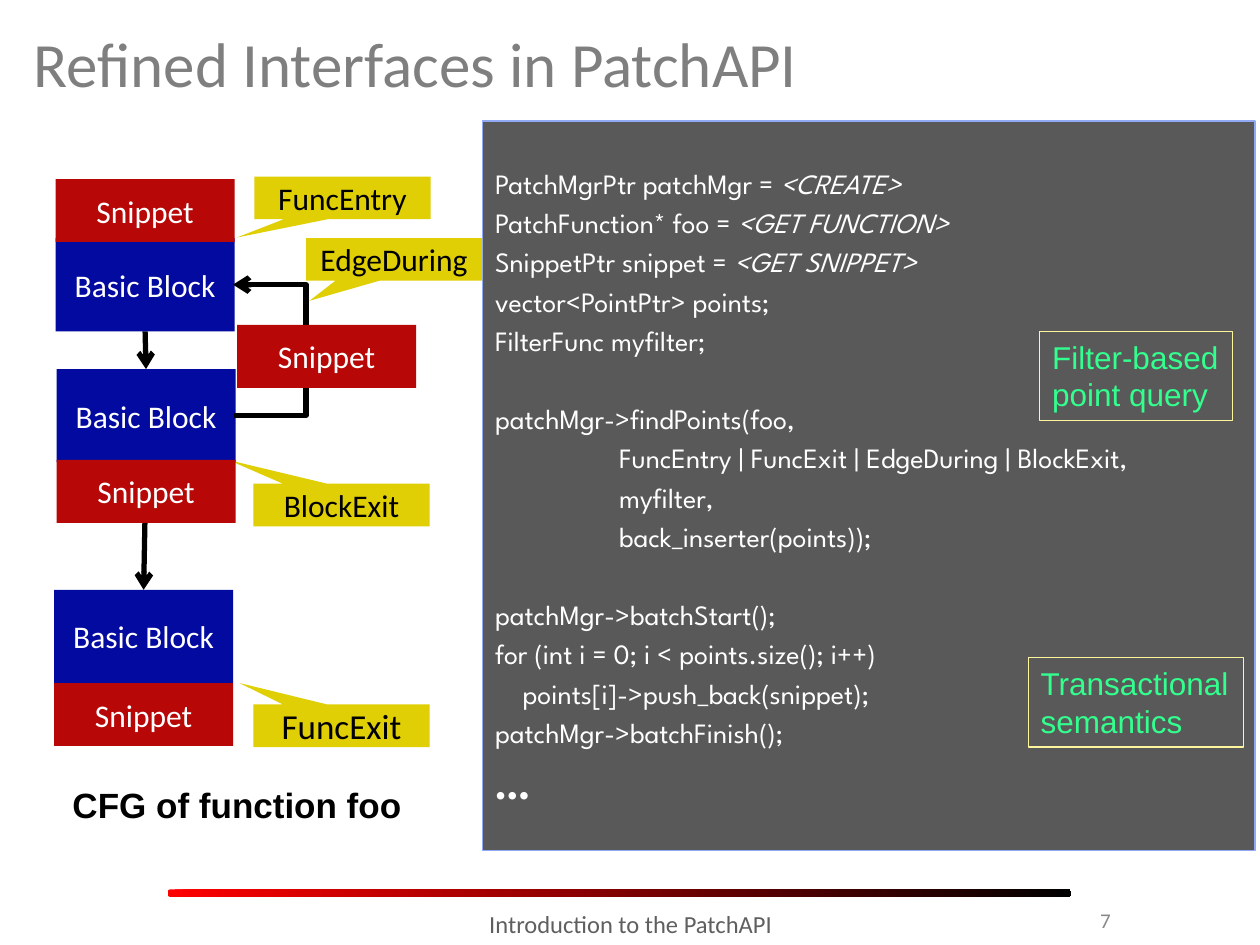
from lxml import etree
from pptx import Presentation
from pptx import util as u
from pptx.dml.color import RGBColor
from pptx.enum import shapes, text
from pptx.oxml import ns

Cm, Pt = u.Cm, u.Pt
COLORS = {
    "title": "7F7F7F", "number": "898989", "footer": "5F5F5F",
    "block": "030A9F", "snippet": "B70707", "callout": "DFCF04",
    "panel": "595959", "panel_line": "92AAF6",
    "note": "33FF8F", "note_line": "FDF69C",
    "red": "FF0000", "black": "000000", "white": "FFFFFF",
}
CODE = [
    "PatchMgrPtr patchMgr = <CREATE>",
    "PatchFunction* foo = <GET FUNCTION>",
    "SnippetPtr snippet = <GET SNIPPET>",
    "vector<PointPtr> points;",
    "FilterFunc myfilter;",
    "patchMgr->findPoints(foo,",
    "                  FuncEntry | FuncExit | EdgeDuring | BlockExit,",
    "                  myfilter,",
    "                  back_inserter(points));",
    "patchMgr->batchStart();",
    "for (int i = 0; i < points.size(); i++)",
    "    points[i]->push_back(snippet);",
    "patchMgr->batchFinish();",
    "…",
]
SECTION_STARTS = (5, 9)
BLOCK_SIZE = (3.61, 1.88)
SNIPPET_SIZE = (3.61, 1.27)
CALLOUT_SIZE = (3.55, 0.86)


def color(name):
    return RGBColor.from_string(COLORS[name])


def style(para, size, ink, font="Calibri", bold=False, align=text.PP_ALIGN.LEFT):
    para.alignment = align
    para.font.name = font
    para.font.size = Pt(size)
    para.font.bold = bold
    para.font.color.rgb = color(ink)


def write(shape, lines, *args, anchor=text.MSO_ANCHOR.MIDDLE, wrap=True, **kwargs):
    frame = shape.text_frame
    frame.word_wrap = wrap
    frame.vertical_anchor = anchor
    frame.text = lines
    for para in frame.paragraphs:
        style(para, *args, **kwargs)


def add_text(page, place, lines, *args, **kwargs):
    box = page.shapes.add_textbox(*map(Cm, place))
    write(box, lines, *args, **kwargs)
    return box


def add_box(page, place, fill, kind=shapes.MSO_SHAPE.RECTANGLE):
    box = page.shapes.add_shape(kind, *map(Cm, place))
    box.shadow.inherit = False
    box.fill.solid()
    box.fill.fore_color.rgb = color(fill)
    box.line.fill.background()
    return box


def add_node(page, left, top, label, fill, size):
    box = add_box(page, (left, top, *size), fill)
    write(box, label, 18, "white", align=text.PP_ALIGN.CENTER)
    return box


def add_callout(page, left, top, label, tip, size=18):
    box = add_box(page, (left, top, *CALLOUT_SIZE), "callout",
                  shapes.MSO_SHAPE.RECTANGULAR_CALLOUT)
    box.adjustments[0], box.adjustments[1] = tip
    write(box, label, size, "black", align=text.PP_ALIGN.CENTER)


def add_arrow(page, kind, ends):
    arrow = page.shapes.add_connector(kind, *map(Cm, ends))
    arrow.line.color.rgb = color("black")
    arrow.line.width = Pt(3)
    etree.SubElement(arrow.line._get_or_add_ln(), ns.qn("a:tailEnd"), type="arrow")
    etree.SubElement(arrow._element.spPr, ns.qn("a:effectLst"))
    return arrow


def join_blocks(page, upper, lower):
    arrow = add_arrow(page, shapes.MSO_CONNECTOR.STRAIGHT, (0, 0, 0, 0))
    arrow.begin_connect(upper, 2)
    arrow.end_connect(lower, 0)


def add_loop(page, start, end, bend):
    """Elbow that leaves to the right, as far as bend, and comes back."""
    loop = add_arrow(page, shapes.MSO_CONNECTOR.ELBOW, (*start, *end))
    ratio = (start[0] - bend) / (start[0] - end[0])
    guides = loop._element.spPr.find(ns.qn("a:prstGeom")).get_or_add_avLst()
    etree.SubElement(guides, ns.qn("a:gd"), name="adj1",
                     fmla=f"val {round(ratio * 100000)}")


def add_code(page):
    panel = add_box(page, (9.73, 2.44, 15.57, 14.71), "panel")
    panel.line.color.rgb = color("panel_line")
    panel.line.width = Pt(0.75)
    frame = panel.text_frame
    frame.word_wrap = True
    frame.vertical_anchor = text.MSO_ANCHOR.TOP
    frame.margin_top = Cm(0.92)
    for index, line in enumerate(CODE):
        para = frame.paragraphs[0] if index == 0 else frame.add_paragraph()
        last = index == len(CODE) - 1
        style(para, 24 if last else 16, "white", "League Spartan", bold=last)
        if index:
            para.space_before = Pt(25.6 if index in SECTION_STARTS else 4.8 if last else 3.2)
        # Placeholders after "= <" are italic
        code, mark, hint = line.partition("= <")
        para.add_run().text = code + mark[:2]
        if mark:
            span = para.add_run()
            span.text = "<" + hint
            span.font.italic = True


def add_note(page, place, lines):
    note = add_text(page, place, lines, 18, "note", "Arial",
                    anchor=text.MSO_ANCHOR.TOP, wrap=False)
    note.line.color.rgb = color("note_line")
    note.line.width = Pt(0.75)


def add_graph(page):
    # Basic blocks and control flow
    blocks = [add_node(page, left, top, "Basic Block", "block", BLOCK_SIZE)
              for left, top in ((1.12, 4.8), (1.14, 7.44), (1.09, 11.89))]
    for upper, lower in zip(blocks, blocks[1:]):
        join_blocks(page, upper, lower)
    add_loop(page, (4.72, 8.38), (4.7, 5.74), 6.17)

    # Instrumentation points
    add_callout(page, 5.13, 3.56, "FuncEntry", (-0.6, 0.93))
    add_callout(page, 6.17, 4.8, "EdgeDuring", (-0.48, 0.97))
    add_callout(page, 5.11, 9.75, "BlockExit", (-0.64, -1.05))
    add_callout(page, 5.11, 14.2, "FuncExit", (-0.58, -1), 20)

    # Inserted snippets
    for left, top in ((1.12, 3.61), (4.78, 6.55), (1.14, 9.27), (1.09, 13.77)):
        add_node(page, left, top, "Snippet", "snippet", SNIPPET_SIZE)

    add_text(page, (1.07, 15.67, 7.42, 1.12), "CFG of function foo", 20, "black",
             "Arial", bold=True, align=text.PP_ALIGN.CENTER,
             anchor=text.MSO_ANCHOR.TOP)


def add_footer(page):
    bar = add_box(page, (3.38, 17.93, 18.21, 0.15), "red",
                  shapes.MSO_SHAPE.ROUNDED_RECTANGLE)
    bar.adjustments[0] = 0.33
    bar.fill.gradient()
    bar.fill.gradient_angle = 0
    for stop, name in zip(bar.fill.gradient_stops, ("red", "black")):
        stop.color.rgb = color(name)
    add_text(page, (6.15, 18.21, 13.13, 1.02), "Introduction to the PatchAPI", 14,
             "footer", align=text.PP_ALIGN.CENTER, anchor=text.MSO_ANCHOR.TOP)
    add_text(page, (19.25, 18.03, 3.39, 1.02), "7", 12, "number",
             align=text.PP_ALIGN.RIGHT)


def main():
    deck = Presentation()
    deck.slide_width, deck.slide_height = Cm(25.4), Cm(19.05)
    page = deck.slides.add_slide(deck.slide_layouts[6])

    add_text(page, (0.43, 0.2, 24.56, 2.11), "Refined Interfaces in PatchAPI",
             36, "title")
    add_code(page)
    add_graph(page)
    add_note(page, (20.96, 6.68, 3.89, 1.8), "Filter-based\npoint query")
    add_note(page, (20.73, 13.26, 4.34, 1.8), "Transactional\nsemantics")
    add_footer(page)
    deck.save("out.pptx")


if __name__ == "__main__":
    main()
